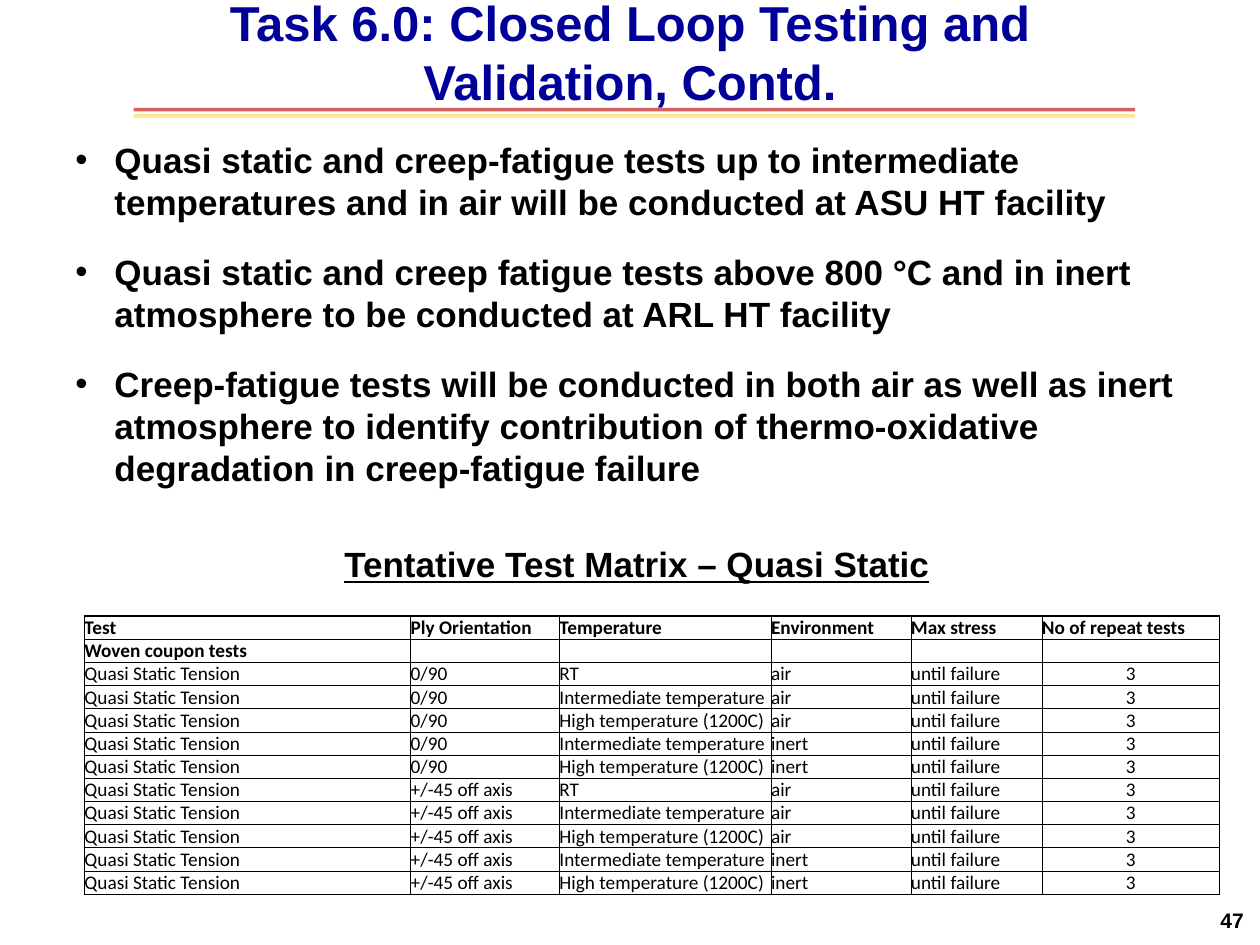
from dataclasses import dataclass
from itertools import product

from lxml import etree
from pptx import Presentation
from pptx import util as u
from pptx.dml import color
from pptx.enum import shapes, text
from pptx.oxml import ns

ALIGN = text.PP_ALIGN
ANCHOR = text.MSO_ANCHOR


@dataclass(frozen=True)
class Theme:
    ink: str = "000000"
    title: str = "000099"
    red: str = "C00000"
    gold: str = "FFC000"
    sans: str = "Arial"
    table_font: str = "Calibri"
    title_size: float = 28
    body_size: float = 20
    table_size: float = 11
    number_size: float = 12
    rule: float = 2
    outer: float = 1
    inner: float = 0.5


def add_xml(parent, tag, **attributes):
    return etree.SubElement(parent, ns.qn(tag), attributes)


def write(para, words, size, font, ink, bold=True, underline=False, align=ALIGN.LEFT):
    para.alignment = align
    span = para.add_run()
    span.text = words
    span.font.size = u.Pt(size)
    span.font.name = font
    span.font.bold = bold
    span.font.underline = underline
    span.font.color.rgb = color.RGBColor.from_string(ink)


class Page:
    COLUMNS, ROWS = 100, 75

    def __init__(self, deck, theme):
        self.theme = theme
        self.column = deck.slide_width / self.COLUMNS
        self.row = deck.slide_height / self.ROWS
        self.shapes = deck.slides.add_slide(deck.slide_layouts[6]).shapes

    def place(self, left, top, width, height):
        return (round(left * self.column), round(top * self.row),
                round(width * self.column), round(height * self.row))

    def rule(self, left, right, top, ink, opacity):
        x, y, width, _ = self.place(left, top, right - left, 0)
        line = self.shapes.add_connector(shapes.MSO_CONNECTOR.STRAIGHT, x, y, x + width, y)
        line.line.width = u.Pt(self.theme.rule)
        line.line.color.rgb = color.RGBColor.from_string(ink)
        paint = line.line._ln.find(".//" + ns.qn("a:srgbClr"))
        add_xml(paint, "a:alpha", val=str(opacity * 1000))
        add_xml(line._element.spPr, "a:effectLst")

    def frame(self, area, anchor=ANCHOR.TOP):
        frame = self.shapes.add_textbox(*self.place(*area)).text_frame
        frame.word_wrap = True
        frame.vertical_anchor = anchor
        return frame

    def label(self, words, area, size, anchor=ANCHOR.TOP, **style):
        style = {"font": self.theme.sans, "ink": self.theme.ink, **style}
        write(self.frame(area, anchor).paragraphs[0], words, size, **style)

    def bullets(self, items, area, indent, gap):
        frame = self.frame(area)
        offset = round(indent * self.column)
        for index, item in enumerate(items):
            para = frame.add_paragraph() if index else frame.paragraphs[0]
            para.space_before = u.Pt(gap if index else 0)
            para.space_after = u.Pt(gap)
            properties = para._p.get_or_add_pPr()
            properties.set("marL", str(offset))
            properties.set("indent", str(-offset))
            add_xml(properties, "a:buFont", typeface=self.theme.sans)
            add_xml(properties, "a:buChar", char="•")
            write(para, item, self.theme.body_size, self.theme.sans, self.theme.ink)

    def borders(self, cell, widths):
        properties = cell._tc.get_or_add_tcPr()
        for index, (side, width) in enumerate(widths.items()):
            line = etree.Element(ns.qn(f"a:ln{side}"), w=str(u.Pt(width)))
            add_xml(add_xml(line, "a:solidFill"), "a:srgbClr", val=self.theme.ink)
            properties.insert(index, line)

    def table(self, records, left, top, widths, height, bold_rows):
        theme = self.theme
        rows, columns = len(records), len(widths)
        area = self.place(left, top, sum(widths), height * rows)
        table = self.shapes.add_table(rows, columns, *area).table
        table.first_row = table.horz_banding = False
        for column, width in zip(table.columns, widths):
            column.width = round(width * self.column)
        for row in table.rows:
            row.height = round(height * self.row)
        for r, c in product(range(rows), range(columns)):
            cell = table.cell(r, c)
            cell.margin_left = cell.margin_right = cell.margin_top = cell.margin_bottom = 0
            cell.vertical_anchor = ANCHOR.BOTTOM
            cell.fill.background()
            self.borders(cell, {
                "L": theme.outer if c == 0 else theme.inner,
                "R": theme.outer if c == columns - 1 else theme.inner,
                "T": theme.outer if r < bold_rows else theme.inner,
                "B": theme.outer if r == 0 else theme.inner,
            })
            para = cell.text_frame.paragraphs[0]
            words = records[r][c]
            if words:
                write(para, words, theme.table_size, theme.table_font, theme.ink,
                      bold=r < bold_rows,
                      align=ALIGN.CENTER if words.isdigit() else ALIGN.LEFT)
            else:
                add_xml(para._p, "a:endParaRPr", sz=str(theme.table_size * 100))


def test_matrix():
    header = ["Test", "Ply Orientation", "Temperature", "Environment",
              "Max stress", "No of repeat tests"]
    group = ["Woven coupon tests"] + [""] * (len(header) - 1)
    middle, high = "Intermediate temperature", "High temperature (1200C)"
    conditions = [("RT", "air"), (middle, "air"), (high, "air"),
                  (middle, "inert"), (high, "inert")]
    tests = [["Quasi Static Tension", ply, heat, air, "until failure", "3"]
             for ply, (heat, air) in product(["0/90", "+/-45 off axis"], conditions)]
    return [header, group, *tests]


def main():
    theme = Theme()
    deck = Presentation()
    deck.slide_width, deck.slide_height = u.Inches(10), u.Inches(7.5)
    page = Page(deck, theme)

    page.rule(10.6, 90.1, 8.7, theme.red, opacity=62)
    page.rule(10.6, 90.1, 9.2, theme.gold, opacity=41)
    page.label("47", (76.4, 71, 23.3, 4), theme.number_size,
               anchor=ANCHOR.MIDDLE, align=ALIGN.RIGHT)
    page.table(test_matrix(), 6.7, 48.9, [25.9, 11.8, 16.8, 11.1, 10.4, 14.1],
               height=1.6, bold_rows=2)
    page.bullets([
        "Quasi static and creep-fatigue tests up to intermediate temperatures "
        "and in air will be conducted at ASU HT facility",
        "Quasi static and creep fatigue tests above 800 °C and in inert "
        "atmosphere to be conducted at ARL HT facility",
        "Creep-fatigue tests will be conducted in both air as well as inert "
        "atmosphere to identify contribution of thermo-oxidative degradation "
        "in creep-fatigue failure",
    ], (5, 10.5, 90, 29.1), indent=3.1, gap=8)
    page.label("Tentative Test Matrix – Quasi Static", (24.3, 42.6, 52.5, 4.4),
               theme.body_size, underline=True, align=ALIGN.CENTER)
    page.label("Task 6.0: Closed Loop Testing and Validation, Contd.", (10, 0.6, 80, 7),
               theme.title_size, anchor=ANCHOR.MIDDLE, ink=theme.title, align=ALIGN.CENTER)
    deck.save("out.pptx")


if __name__ == "__main__":
    main()
